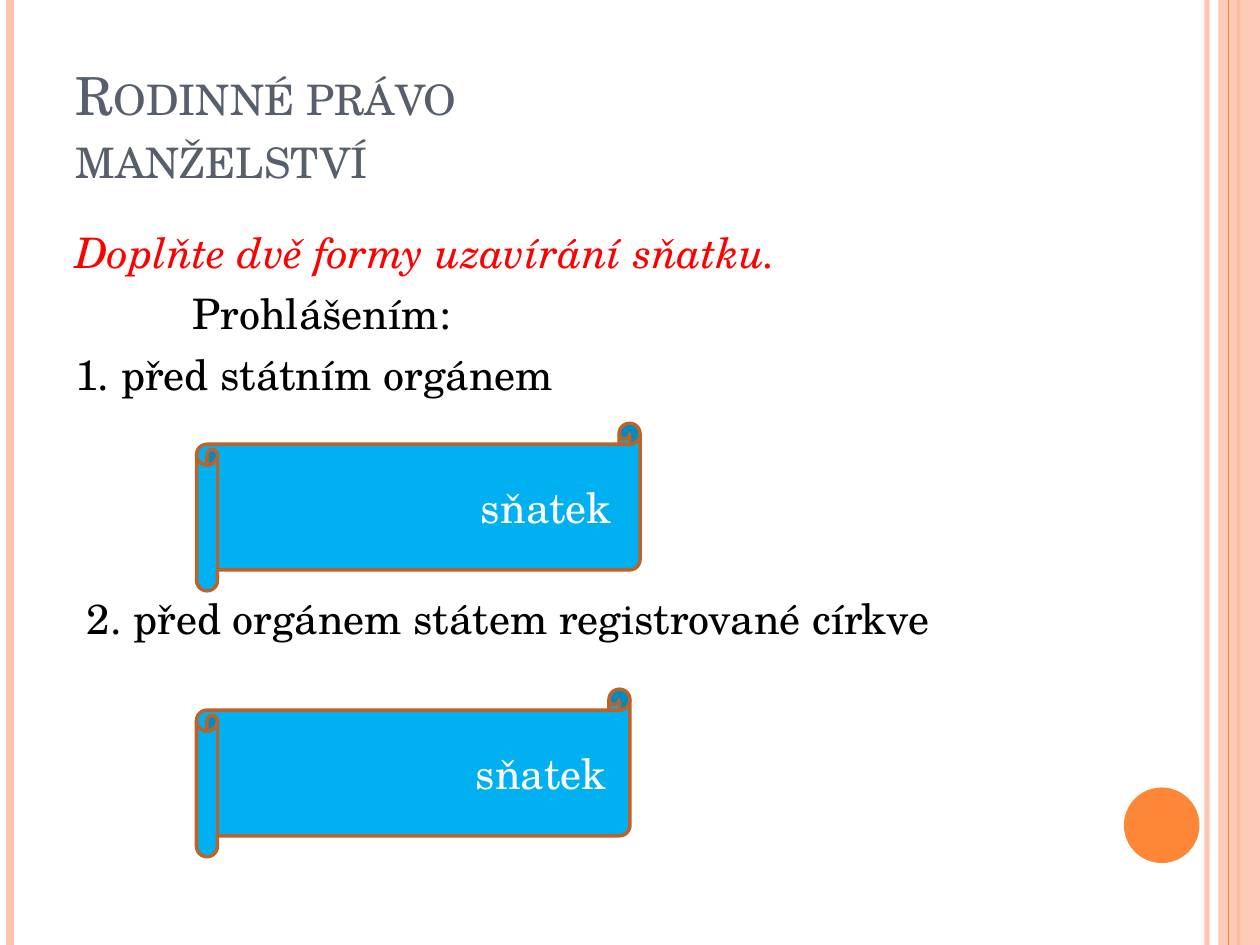
from dataclasses import dataclass

from lxml.etree import SubElement
from pptx import Presentation
from pptx.dml.color import RGBColor
from pptx.enum.shapes import MSO_CONNECTOR as Connector, MSO_SHAPE as Shape
from pptx.enum.text import MSO_ANCHOR as Anchor, MSO_AUTO_SIZE as AutoSize, PP_ALIGN as Align
from pptx.oxml.ns import qn
from pptx.util import Inches, Pt

# Grid: 100 columns by 75 rows of square cells
WIDTH, HEIGHT = Inches(10), Inches(7.5)
COLUMN, ROW = WIDTH / 100, HEIGHT / 75
FONT = "TeX Gyre Schola"
PEACH, ORANGE, RUST, SKY = "FEC3AE", "FE8637", "BC6329", "00B0F0"
SLATE, RED, BLACK, WHITE = "575F6D", "FF0000", "000000", "FFFFFF"


@dataclass
class Area:
    column: float
    row: float
    columns: float
    rows: float

    def box(self) -> tuple:
        return (int(self.column * COLUMN), int(self.row * ROW),
                int(self.columns * COLUMN), int(self.rows * ROW))


@dataclass
class Stripe:
    column: float
    color: str
    weight: float
    opacity: int = 100


@dataclass
class Entry:
    text: str
    color: str = BLACK
    italic: bool = False
    indent: float = 0
    before: float = 6


STRIPES = [Stripe(95.8, PEACH, 3, 93), Stripe(0.8, PEACH, 4.5), Stripe(98.3, ORANGE, 1.5)]
INNER_STRIPE = Stripe(97.5, ORANGE, 0.75)
BAND = Area(96.7, 0, 3.3, 75)
DISC = Area(89.2, 62.5, 6, 6)
TITLE = Area(5, 3, 81.7, 12.5)
BODY = Area(5, 17.5, 81.7, 53.3)
SCROLLS = [Area(15.6, 33.6, 35.2, 13.3), Area(15.6, 54.7, 34.4, 13.3)]
ENTRIES = [
    Entry("Doplňte dvě formy uzavírání sňatku.", RED, True),
    Entry("Prohlášením:", indent=9.3),
    Entry("1. před státním orgánem"),
    Entry("2. před orgánem státem registrované církve", indent=0.9, before=110.5),
]


def rgb(color: str) -> RGBColor:
    return RGBColor.from_string(color)


def set_opacity(part, percent: int) -> None:
    if percent < 100:
        for tone in part.iter(qn("a:srgbClr")):
            SubElement(tone, qn("a:alpha")).set("val", str(percent * 1000))


def add_span(para, text: str, size: float, color: str, italic: bool = False):
    span = para.add_run()
    span.text = text
    span.font.name, span.font.size = FONT, Pt(size)
    span.font.italic = italic
    span.font.color.rgb = rgb(color)
    return span


def draw_stripe(page, stripe: Stripe) -> None:
    x = int(stripe.column * COLUMN)
    line = page.shapes.add_connector(Connector.STRAIGHT, x, 0, x, HEIGHT)
    line.line.color.rgb = rgb(stripe.color)
    line.line.width = Pt(stripe.weight)
    properties = line._element.spPr
    set_opacity(properties, stripe.opacity)
    SubElement(properties, qn("a:effectLst"))


def draw_shape(page, kind, area: Area, color: str, opacity: int = 100):
    shape = page.shapes.add_shape(kind, *area.box())
    shape.shadow.inherit = False
    shape.fill.solid()
    shape.fill.fore_color.rgb = rgb(color)
    set_opacity(shape._element.spPr, opacity)
    shape.line.fill.background()
    return shape


def draw_scroll(page, area: Area, text: str) -> None:
    scroll = draw_shape(page, Shape.HORIZONTAL_SCROLL, area, SKY)
    scroll.line.color.rgb = rgb(RUST)
    scroll.line.width = Pt(2)
    frame = scroll.text_frame
    frame.word_wrap = True
    frame.vertical_anchor = Anchor.MIDDLE
    # The wide left margin leaves room for the missing word
    frame.margin_left, frame.margin_right = int(19.5 * COLUMN), 0
    para = frame.paragraphs[0]
    para.alignment = Align.CENTER
    add_span(para, text, 24, WHITE)


def write_title(page, lines: list[str]) -> None:
    title = page.shapes.title
    title.left, title.top, title.width, title.height = TITLE.box()
    frame = title.text_frame
    frame.auto_size = AutoSize.NONE
    frame.vertical_anchor = Anchor.BOTTOM
    para = frame.paragraphs[0]
    para.alignment = Align.LEFT
    for number, line in enumerate(lines):
        if number:
            para.add_line_break()
        span = add_span(para, line, 30, SLATE)
        span.font._element.set("cap", "small")


def write_body(page, entries: list[Entry]) -> None:
    frame = page.shapes.add_textbox(*BODY.box()).text_frame
    frame.word_wrap = True
    for number, entry in enumerate(entries):
        para = frame.add_paragraph() if number else frame.paragraphs[0]
        para.space_before = Pt(entry.before)
        para._p.get_or_add_pPr().set("marL", str(int(entry.indent * COLUMN)))
        add_span(para, entry.text, 24, entry.color, entry.italic)


def main() -> None:
    deck = Presentation()
    deck.slide_width, deck.slide_height = WIDTH, HEIGHT
    page = deck.slides.add_slide(deck.slide_layouts[5])

    # Side decoration
    for stripe in STRIPES:
        draw_stripe(page, stripe)
    draw_shape(page, Shape.RECTANGLE, BAND, PEACH, 87)
    draw_stripe(page, INNER_STRIPE)
    draw_shape(page, Shape.OVAL, DISC, ORANGE)

    # Text and the scrolls to fill in
    write_title(page, ["Rodinné právo", "manželství"])
    write_body(page, ENTRIES)
    for area in SCROLLS:
        draw_scroll(page, area, "sňatek")

    deck.save("out.pptx")


if __name__ == "__main__":
    main()
